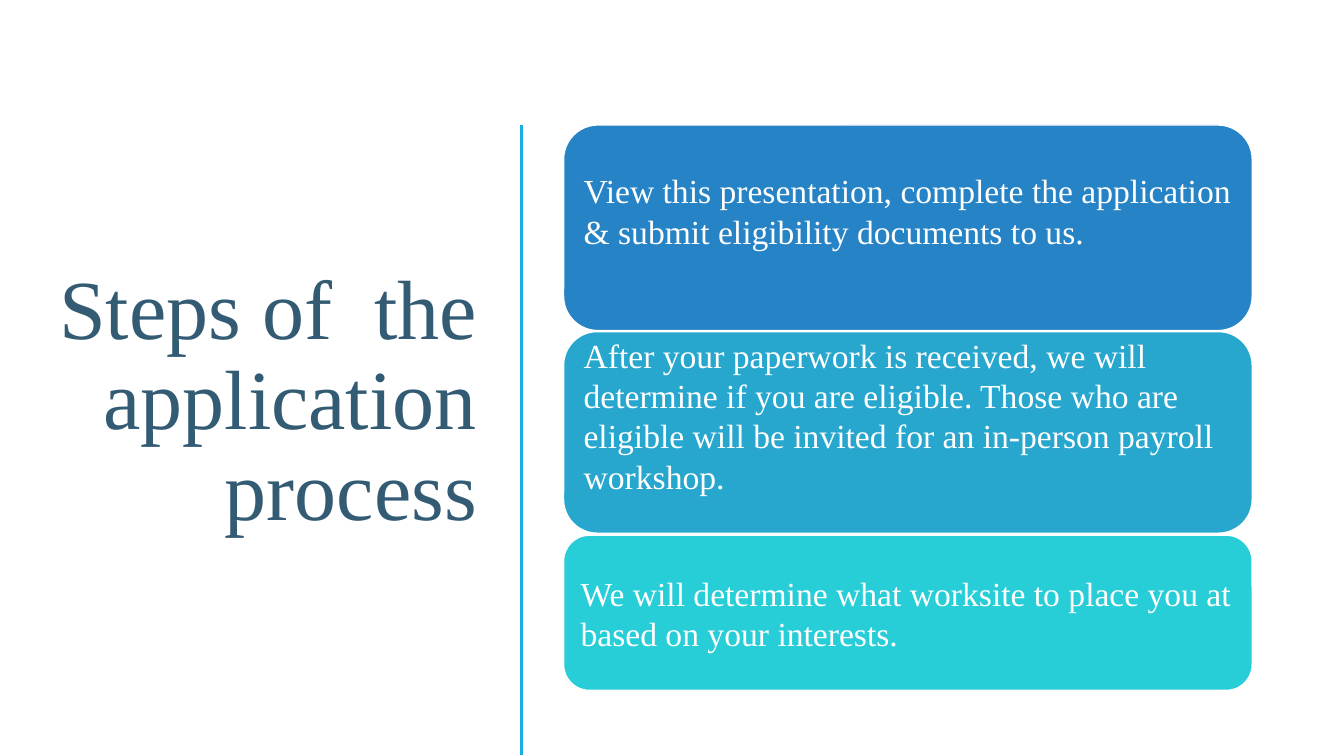
import pptx
import pptx.dml.color
import pptx.enum.shapes
import pptx.enum.text
import pptx.oxml.ns
import pptx.util
from dataclasses import dataclass
from lxml import etree

Inches = pptx.util.Inches
Pt = pptx.util.Pt
MIDDLE = pptx.enum.text.MSO_ANCHOR.MIDDLE


@dataclass(frozen=True)
class Theme:
    font: str = "Times New Roman"
    title_size: int = 60
    step_size: int = 24
    title: str = "335B74"
    divider: str = "1CADE4"
    white: str = "FFFFFF"
    steps: tuple = ("2683C6", "27A7CE", "27CED7")


theme = Theme()


def rgb(value):
    return pptx.dml.color.RGBColor.from_string(value)


def set_text(frame, text, size, color):
    """Fill a wrapped, vertically centred frame with one styled paragraph."""
    frame.text = text
    frame.word_wrap = True
    frame.auto_size = pptx.enum.text.MSO_AUTO_SIZE.NONE
    frame.vertical_anchor = MIDDLE
    para = frame.paragraphs[0]
    for span in para.runs:
        span.font.name = theme.font
        span.font.size = Pt(size)
        span.font.color.rgb = rgb(color)
    return para


deck = pptx.Presentation()
deck.slide_width = Inches(13.33)
deck.slide_height = Inches(7.5)
page = deck.slides.add_slide(deck.slide_layouts[5])

# Title
title = page.shapes.title
title.left, title.top = Inches(0.43), Inches(0.71)
title.width, title.height = Inches(4.4), Inches(6.57)
para = set_text(title.text_frame, "Steps of  the application process",
                theme.title_size, theme.title)
para.alignment = pptx.enum.text.PP_ALIGN.RIGHT
para.line_spacing = 0.9
para.space_after = Pt(6)

# Divider
divider = page.shapes.add_connector(
    pptx.enum.shapes.MSO_CONNECTOR.STRAIGHT,
    Inches(5.17), Inches(1.24), Inches(5.17), Inches(7.49))
divider.line.color.rgb = rgb(theme.divider)
divider.line.width = Pt(2)
etree.SubElement(divider.element.spPr, pptx.oxml.ns.qn("a:effectLst"))

# Steps: top, height, margin around the text box, bottom inset, text
steps = [
    (1.24, 2.04, 0.1, 0.44,
     "View this presentation, complete the application "
     "& submit eligibility documents to us."),
    (3.29, 2.0, 0.1, 0.44,
     "After your paperwork is received, we will determine if you are eligible. "
     "Those who are eligible will be invited for an in-person payroll workshop."),
    (5.31, 1.54, 0.07, 0.1,
     "We will determine what worksite to place you at based on your interests."),
]
card_left, card_width = 5.59, 6.83
group = page.shapes.add_group_shape()
for (top, height, margin, bottom_inset, text), color in zip(steps, theme.steps):
    card = group.shapes.add_shape(
        pptx.enum.shapes.MSO_SHAPE.ROUNDED_RECTANGLE,
        Inches(card_left), Inches(top), Inches(card_width), Inches(height))
    card.shadow.inherit = False
    card.fill.solid()
    card.fill.fore_color.rgb = rgb(color)
    card.line.color.rgb = rgb(theme.white)
    card.line.width = Pt(1)

    box = group.shapes.add_textbox(
        Inches(card_left + margin), Inches(top + margin),
        Inches(card_width - 2 * margin), Inches(height - 2 * margin))
    frame = box.text_frame
    set_text(frame, text, theme.step_size, theme.white)
    frame.margin_left = frame.margin_right = frame.margin_top = Inches(0.1)
    frame.margin_bottom = Inches(bottom_inset)

deck.save("out.pptx")
